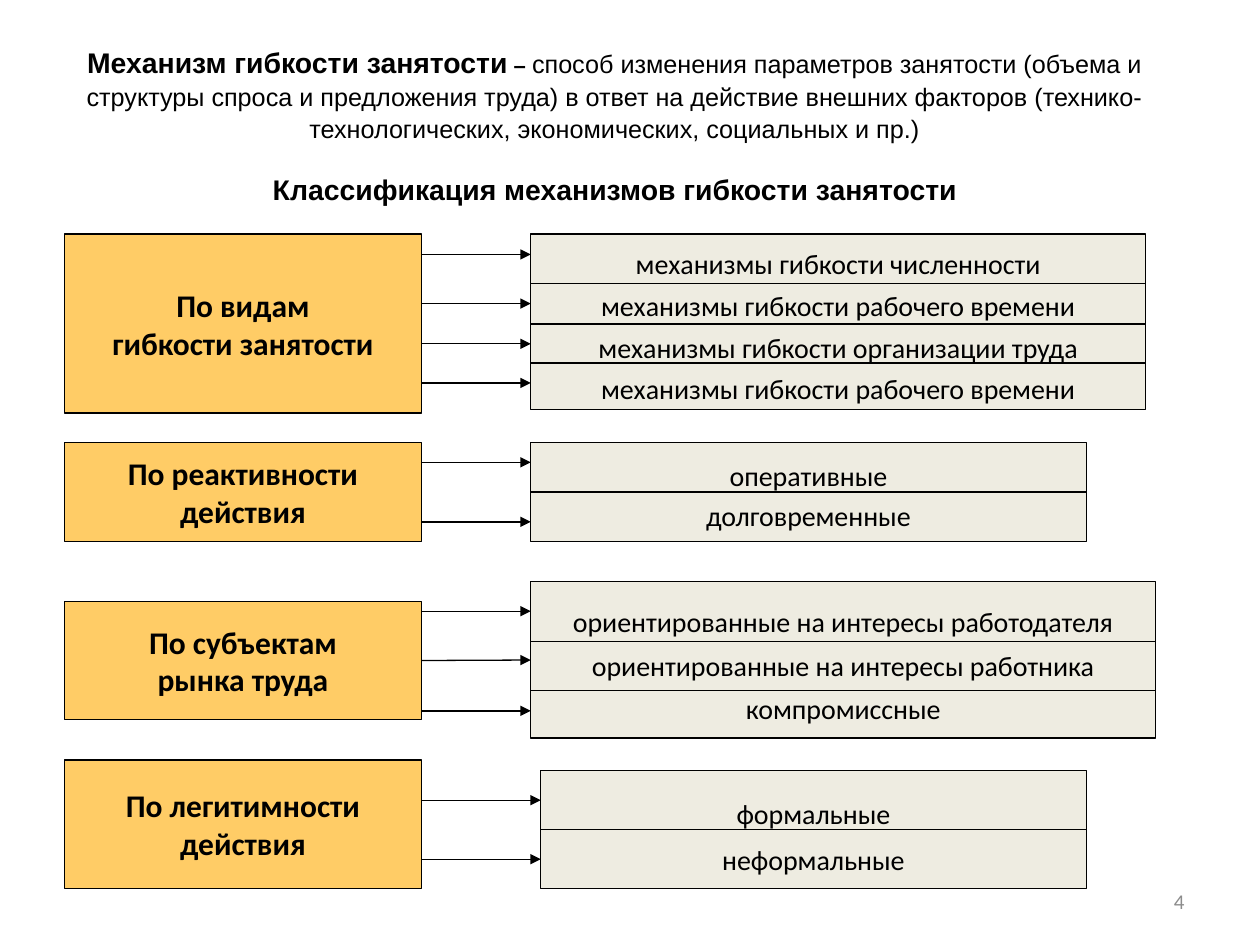
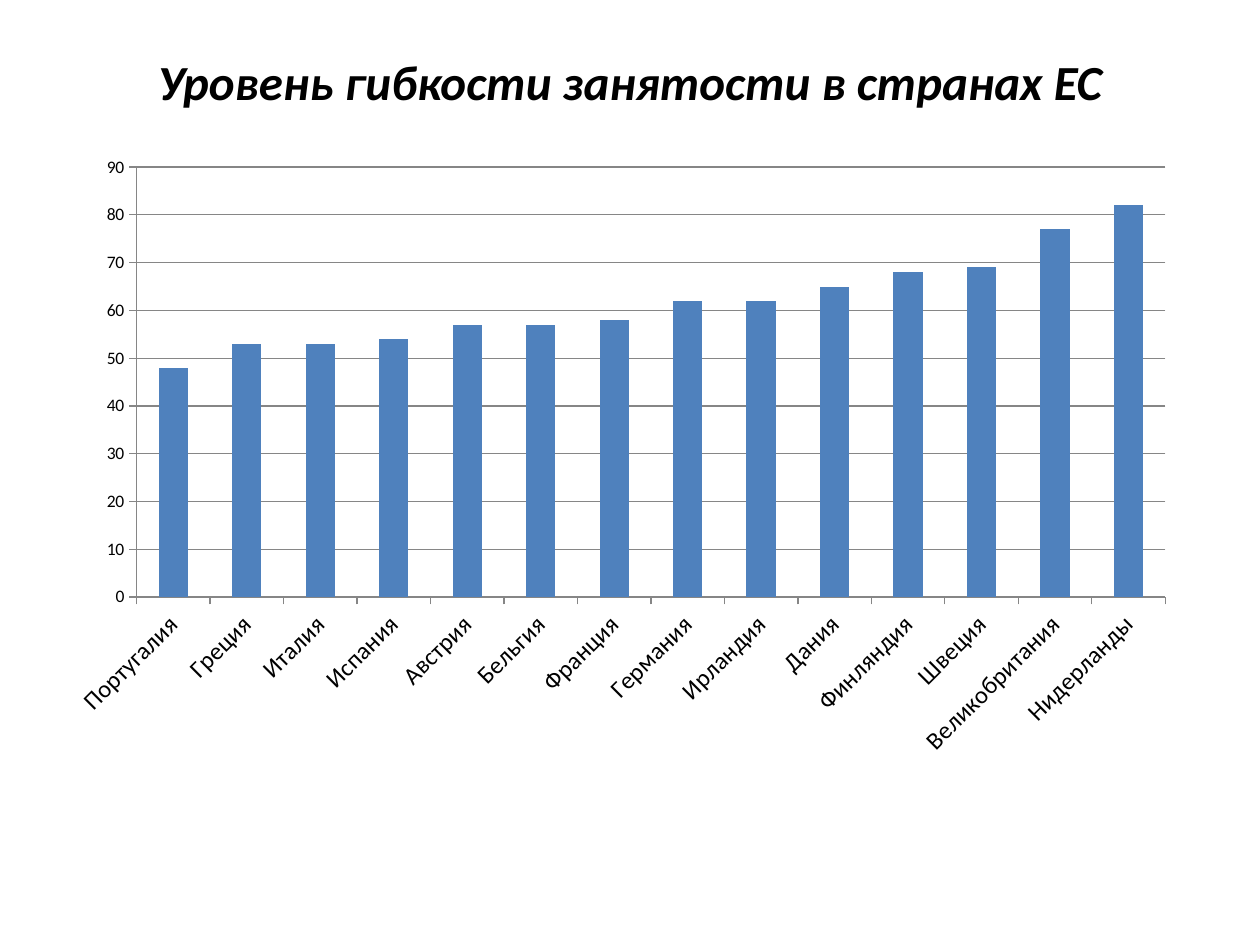
import pptx
import pptx.chart.data
import pptx.dml.color
import pptx.enum.chart
import pptx.enum.shapes
import pptx.enum.text
import pptx.oxml
import pptx.oxml.ns
import pptx.util
from pptx.util import Cm

COLORS = {"text": "000000", "line": "000000", "criterion": "FFCC66",
          "mechanisms": "EEECE1", "number": "8C8C8C", "bar": "4F81BD",
          "axis": "868686"}
BODY_FONT = "Calibri"
TITLE_FONT = "Arial"
TOP, LEFT, BOTTOM, RIGHT = range(4)

CRITERION_LEFT, CRITERION_WIDTH = 1.3, 7.2

# Lengths in cm: boxes are (top, height) and (left, top, width, height)
GROUPS = [
    {"criterion": ["По видам", "гибкости занятости"], "box": (4.72, 3.61),
     "mechanisms": ["механизмы гибкости численности",
                    "механизмы гибкости рабочего времени",
                    "механизмы гибкости организации труда",
                    "механизмы гибкости рабочего времени"],
     "list": (10.7, 4.72, 12.4, 3.53), "spacing": 1.25,
     "dividers": [5.72, 6.53, 7.32], "arrows": [5.13, 6.12, 6.93, 7.72]},
    {"criterion": ["По реактивности", "действия"], "box": (8.92, 2),
     "mechanisms": ["оперативные", "долговременные"],
     "list": (10.7, 8.92, 11.2, 2), "spacing": 1.2,
     "dividers": [9.92], "arrows": [9.32, 10.52]},
    {"criterion": ["По субъектам", "рынка труда"], "box": (12.12, 2.39),
     "mechanisms": ["ориентированные на интересы работодателя",
                    "ориентированные на интересы работника",
                    "компромиссные"],
     "list": (10.7, 11.73, 12.6, 3.15), "spacing": 1.3,
     "dividers": [12.93, 13.92], "arrows": [12.32, 13.32, 14.33]},
    {"criterion": ["По легитимности", "действия"], "box": (15.32, 2.59),
     "mechanisms": ["формальные", "неформальные"],
     "list": (10.9, 15.53, 11, 2.39), "spacing": 1.4,
     "dividers": [16.73], "arrows": [16.13, 17.32]},
]

FLEXIBILITY = {
    "Португалия": 48, "Греция": 53, "Италия": 53, "Испания": 54,
    "Австрия": 57, "Бельгия": 57, "Франция": 58, "Германия": 62,
    "Ирландия": 62, "Дания": 65, "Финляндия": 68, "Швеция": 69,
    "Великобритания": 77, "Нидерланды": 82,
}


def rgb(name):
    return pptx.dml.color.RGBColor.from_string(COLORS[name])


def write(tf, paragraphs, size=18, font=BODY_FONT, color="text", bold=False,
          italic=False, align="CENTER", spacing=None, gap=0, wrap=True):
    """Fill a frame; a paragraph is a string or a list of (text, size, bold)."""
    tf.word_wrap = wrap
    tf.vertical_anchor = pptx.enum.text.MSO_ANCHOR.MIDDLE
    for i, runs in enumerate(paragraphs):
        p = tf.add_paragraph() if i else tf.paragraphs[0]
        p.alignment = getattr(pptx.enum.text.PP_ALIGN, align)
        if spacing:
            p.line_spacing = spacing
        if i and gap:
            p.space_before = pptx.util.Pt(gap)
        if isinstance(runs, str):
            runs = [(runs, size, bold)]
        for text, run_size, run_bold in runs:
            r = p.add_run()
            r.text = text
            r.font.name = font
            r.font.size = pptx.util.Pt(run_size)
            r.font.bold = run_bold
            r.font.italic = italic
            r.font.color.rgb = rgb(color)


def add_text(slide, left, top, width, height, paragraphs, **fmt):
    sp = slide.shapes.add_textbox(Cm(left), Cm(top), Cm(width), Cm(height))
    write(sp.text_frame, paragraphs, **fmt)


def add_box(slide, left, top, width, height, fill, paragraphs, **fmt):
    sp = slide.shapes.add_shape(pptx.enum.shapes.MSO_SHAPE.RECTANGLE,
                                Cm(left), Cm(top), Cm(width), Cm(height))
    sp.shadow.inherit = False
    sp.fill.solid()
    sp.fill.fore_color.rgb = rgb(fill)
    sp.line.color.rgb = rgb("line")
    sp.line.width = pptx.util.Pt(0.75)
    write(sp.text_frame, paragraphs, wrap=False, **fmt)
    return sp


def at_middle(sp, y):
    return abs(sp.top + sp.height / 2 - Cm(y)) < Cm(0.03)


def add_level_line(slide, y, start, start_side, end, end_side, arrow=False):
    """Draw a level line between box sides, joined where y is their middle."""
    x1, x2 = [sp.left + (sp.width if side == RIGHT else 0)
              for sp, side in ((start, start_side), (end, end_side))]
    line = slide.shapes.add_connector(
        pptx.enum.shapes.MSO_CONNECTOR.STRAIGHT, x1, Cm(y), x2, Cm(y))
    if at_middle(start, y):
        line.begin_connect(start, start_side)
    if at_middle(end, y):
        line.end_connect(end, end_side)
    line.line.color.rgb = rgb("line")
    line.line.width = pptx.util.Pt(0.75)
    if arrow:
        ln = line.line._get_or_add_ln()
        ln.append(pptx.oxml.parse_xml(
            f'<a:tailEnd {pptx.oxml.ns.nsdecls("a")} type="triangle"/>'))
    line._element.spPr.append(pptx.oxml.parse_xml(
        f'<a:effectLst {pptx.oxml.ns.nsdecls("a")}/>'))


def add_group(slide, group):
    top, height = group["box"]
    criterion = add_box(slide, CRITERION_LEFT, top, CRITERION_WIDTH, height,
                        "criterion", group["criterion"], bold=True)
    mechanisms = add_box(slide, *group["list"], "mechanisms",
                         group["mechanisms"], size=16,
                         spacing=group["spacing"])
    for y in group["dividers"]:
        add_level_line(slide, y, mechanisms, LEFT, mechanisms, RIGHT)
    for y in group["arrows"]:
        add_level_line(slide, y, criterion, RIGHT, mechanisms, LEFT, arrow=True)


def add_column_chart(slide, left, top, width, height, values):
    data = pptx.chart.data.CategoryChartData()
    data.categories = list(values)
    data.add_series("Series 1", list(values.values()))
    chart = slide.shapes.add_chart(
        pptx.enum.chart.XL_CHART_TYPE.COLUMN_CLUSTERED,
        Cm(left), Cm(top), Cm(width), Cm(height), data).chart
    chart.has_legend = chart.has_title = False
    chart.font.name = BODY_FONT
    chart.font.size = pptx.util.Pt(10)
    chart.font.color.rgb = rgb("text")

    plot = chart.plots[0]
    plot.gap_width = 150
    plot.vary_by_categories = False
    series = plot.series[0]
    series.invert_if_negative = False
    series.format.fill.solid()
    series.format.fill.fore_color.rgb = rgb("bar")

    value_axis, category_axis = chart.value_axis, chart.category_axis
    value_axis.minimum_scale, value_axis.maximum_scale = 0, 90
    value_axis.major_unit = 10
    value_axis.has_major_gridlines = True
    for item in (value_axis, category_axis, value_axis.major_gridlines):
        item.format.line.color.rgb = rgb("axis")
        item.format.line.width = pptx.util.Pt(0.75)
    for axis, size in ((value_axis, 10), (category_axis, 14)):
        axis.major_tick_mark = pptx.enum.chart.XL_TICK_MARK.OUTSIDE
        axis.tick_labels.font.size = pptx.util.Pt(size)
        axis.tick_labels.font.name = BODY_FONT
        axis.tick_labels.font.color.rgb = rgb("text")
    label_body = chart.element.xpath(".//c:catAx/c:txPr/a:bodyPr")[0]
    label_body.set("rot", str(-45 * 60000))
    label_body.set("vert", "horz")


def build_classification(slide):
    add_text(slide, 1.47, 0.71, 21.84, 3.61, [
        [("Механизм гибкости занятости", 16.2, True),
         (" – ", 12.6, True),
         ("способ изменения параметров занятости (объема и структуры спроса "
          "и предложения труда) в ответ на действие внешних факторов "
          "(технико-технологических, экономических, социальных и пр.)",
          14.4, False)],
        [("Классификация механизмов гибкости занятости", 16.2, True)],
    ], font=TITLE_FONT, spacing=1.06, gap=15)
    for group in GROUPS:
        add_group(slide, group)
    add_text(slide, 18.2, 17.65, 5.93, 1.02, ["4"], size=12, color="number",
             align="RIGHT")


def build_countries(slide):
    add_text(slide, 1.27, 0.76, 22.86, 1.75,
             ["Уровень гибкости занятости в странах ЕС"],
             size=28, bold=True, italic=True)
    add_column_chart(slide, 1.09, 2.92, 22.86, 12.57, FLEXIBILITY)


def main():
    prs = pptx.Presentation()
    prs.slide_width, prs.slide_height = Cm(25.4), Cm(19.05)
    for build in (build_classification, build_countries):
        build(prs.slides.add_slide(prs.slide_layouts[6]))
    prs.save("out.pptx")


if __name__ == "__main__":
    main()
